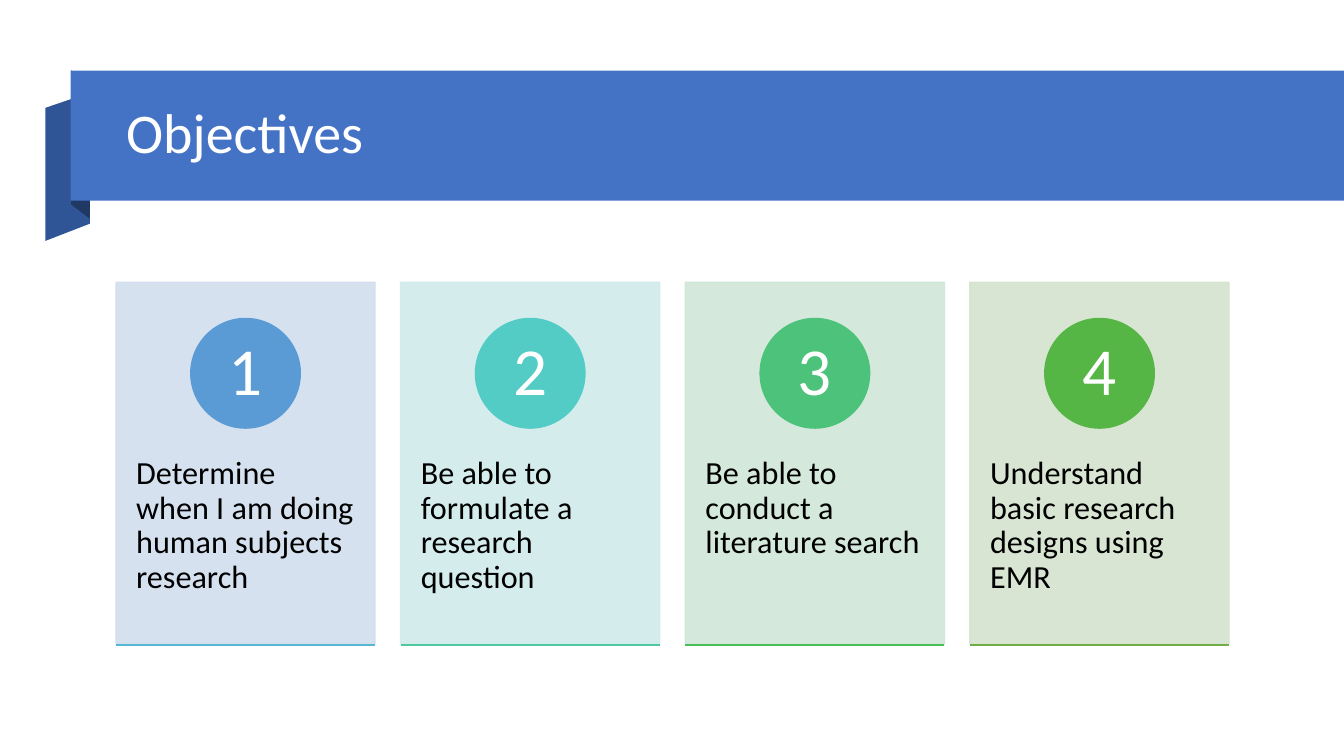
from lxml import etree
from pptx import Presentation
from pptx.dml.color import RGBColor
from pptx.enum.shapes import MSO_CONNECTOR, MSO_SHAPE
from pptx.enum.text import MSO_ANCHOR, PP_ALIGN
from pptx.oxml.ns import qn
from pptx.util import Inches, Pt

RECTANGLE, OVAL = MSO_SHAPE.RECTANGLE, MSO_SHAPE.OVAL
STRAIGHT = MSO_CONNECTOR.STRAIGHT
TOP, MIDDLE = MSO_ANCHOR.TOP, MSO_ANCHOR.MIDDLE
LEFT, CENTER = PP_ALIGN.LEFT, PP_ALIGN.CENTER

WHITE = RGBColor(0xFF, 0xFF, 0xFF)
BLACK = RGBColor(0x00, 0x00, 0x00)
BAND_BLUE = RGBColor(0x44, 0x72, 0xC4)
RIBBON_BLUE = RGBColor(0x2F, 0x55, 0x97)
FOLD_NAVY = RGBColor(0x20, 0x38, 0x64)

OBJECTIVES = [
    ("Determine when I am doing human subjects research",
     RGBColor(0xD2, 0xDE, 0xEF), RGBColor(0x5B, 0x9B, 0xD5), RGBColor(0x57, 0xB7, 0xD1)),
    ("Be able to formulate a research question",
     RGBColor(0xD0, 0xEC, 0xEA), RGBColor(0x53, 0xCC, 0xC5), RGBColor(0x4F, 0xC7, 0xA0)),
    ("Be able to conduct a literature search",
     RGBColor(0xD0, 0xE7, 0xD8), RGBColor(0x4C, 0xC2, 0x7B), RGBColor(0x48, 0xBD, 0x58)),
    ("Understand basic research designs using EMR",
     RGBColor(0xD5, 0xE3, 0xCF), RGBColor(0x55, 0xB6, 0x46), RGBColor(0x70, 0xAD, 0x47)),
]

CARD_LEFT, CARD_PITCH, CARD_WIDTH = 8.63, 21.18, 19.28
CARD_TOP, CARD_HEIGHT = 37.33, 47.87
CIRCLE_TOP, CIRCLE_WIDTH, CIRCLE_HEIGHT = 42.13, 8.15, 14.5
TEXT_TOP, TEXT_HEIGHT = 55.6, 28.8
RULE_TOP = 85.33


class SlideBuilder:
    """Draws styled elements on one slide, with lengths in percent of its size."""

    font = "Calibri"

    def __init__(self, deck):
        self.deck = deck
        self.page = deck.slides.add_slide(deck.slide_layouts[5])

    def across(self, percent):
        return round(self.deck.slide_width * percent / 100)

    def down(self, percent):
        return round(self.deck.slide_height * percent / 100)

    def frame(self, left, top, width, height):
        return self.across(left), self.down(top), self.across(width), self.down(height)

    def label(self, box, text, size, color, align=LEFT, anchor=TOP, insets=(0.1, 0.05)):
        body = box.text_frame
        body.word_wrap = True
        body.vertical_anchor = anchor
        body.margin_left = body.margin_right = Inches(insets[0])
        body.margin_top = body.margin_bottom = Inches(insets[1])
        body.text = text
        para = body.paragraphs[0]
        para.alignment = align
        para.line_spacing = 0.9
        para.font.name = self.font
        para.font.size = Pt(size)
        para.font.color.rgb = color

    def paint(self, shape, color, outlined=False, opacity=100):
        shape.shadow.inherit = False
        shape.fill.solid()
        shape.fill.fore_color.rgb = color
        if outlined:
            shape.line.color.rgb = color
            shape.line.width = Pt(1)
        else:
            shape.line.fill.background()
        if opacity < 100:
            for tint in shape.element.spPr.iter(qn("a:srgbClr")):
                etree.SubElement(tint, qn("a:alpha"), val=str(opacity * 1000))

    def shape(self, kind, area, color, outlined=False, opacity=100):
        shape = self.page.shapes.add_shape(kind, *self.frame(*area))
        self.paint(shape, color, outlined, opacity)
        return shape

    def polygon(self, points, color):
        corners = [(self.across(x), self.down(y)) for x, y in points]
        outline = self.page.shapes.build_freeform(*corners[0])
        outline.add_line_segments(corners[1:], close=True)
        self.paint(outline.convert_to_shape(), color)

    def title(self, area, text, size, color):
        title = self.page.shapes.title
        title.left, title.top, title.width, title.height = self.frame(*area)
        title.element.getparent().append(title.element)
        self.label(title, text, size, color, anchor=MIDDLE)

    def textbox(self, area, text, size, color, insets):
        box = self.page.shapes.add_textbox(*self.frame(*area))
        self.label(box, text, size, color, insets=insets)

    def rule(self, left, top, width, color):
        x, y = self.across(left), self.down(top)
        line = self.page.shapes.add_connector(STRAIGHT, x, y, x + self.across(width), y)
        line.line.color.rgb = color
        line.line.width = Pt(1)
        etree.SubElement(line.element.spPr, qn("a:effectLst"))

    def card(self, index, text, panel_color, circle_color, rule_color):
        left = CARD_LEFT + index * CARD_PITCH
        self.shape(RECTANGLE, (left, CARD_TOP, CARD_WIDTH, CARD_HEIGHT),
                   panel_color, outlined=True, opacity=90)
        self.textbox((left, TEXT_TOP, CARD_WIDTH, TEXT_HEIGHT), text, 23, BLACK, (0.2, 0.36))
        circle_left = left + (CARD_WIDTH - CIRCLE_WIDTH) / 2
        circle = self.shape(OVAL, (circle_left, CIRCLE_TOP, CIRCLE_WIDTH, CIRCLE_HEIGHT),
                            circle_color, outlined=True)
        self.label(circle, str(index + 1), 48, WHITE, CENTER, MIDDLE, (0.08, 0.01))
        self.rule(left, RULE_TOP, CARD_WIDTH, rule_color)


def main():
    deck = Presentation()
    deck.slide_width, deck.slide_height = Inches(13.33), Inches(7.5)
    slide = SlideBuilder(deck)
    slide.polygon([(6.68, 29.6), (3.38, 31.87), (3.38, 14.27), (6.68, 12.27)], RIBBON_BLUE)
    slide.polygon([(6.68, 28.93), (5.3, 27.07), (5.3, 9.33), (6.68, 11.33)], FOLD_NAVY)
    slide.shape(RECTANGLE, (5.26, 9.33, 94.74, 17.2), BAND_BLUE)
    slide.title((8.63, 11.47, 84.55, 12.8), "Objectives", 40, WHITE)
    for index, objective in enumerate(OBJECTIVES):
        slide.card(index, *objective)
    deck.save("out.pptx")


if __name__ == "__main__":
    main()
